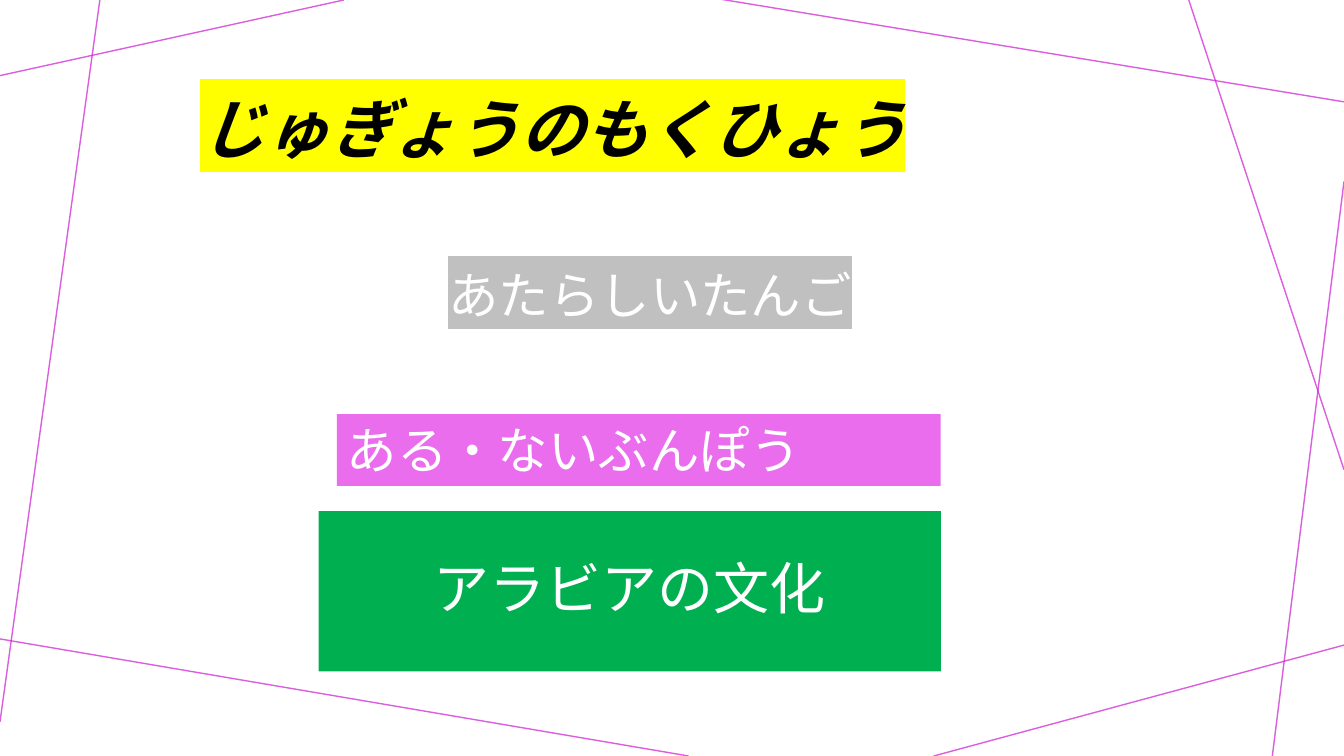
from lxml import etree
from pptx import Presentation
from pptx.dml.color import RGBColor
from pptx.enum.shapes import MSO_CONNECTOR, MSO_SHAPE
from pptx.enum.text import MSO_ANCHOR, PP_ALIGN
from pptx.oxml.ns import qn
from pptx.util import Inches, Pt

STRAIGHT = MSO_CONNECTOR.STRAIGHT
RECTANGLE = MSO_SHAPE.RECTANGLE
TOP, MIDDLE = MSO_ANCHOR.TOP, MSO_ANCHOR.MIDDLE
LEFT, CENTER = PP_ALIGN.LEFT, PP_ALIGN.CENTER

BLACK = RGBColor(0x00, 0x00, 0x00)
WHITE = RGBColor(0xFF, 0xFF, 0xFF)
YELLOW = RGBColor(0xFF, 0xFF, 0x00)
SILVER = RGBColor(0xC0, 0xC0, 0xC0)
GREEN = RGBColor(0x00, 0xB0, 0x50)
PINK = RGBColor(0xE9, 0x6D, 0xEC)
MAGENTA = RGBColor(0xCD, 0x1B, 0xD1)

BORDER_LINES = [
    (25.58, 0, 0, 10),
    (7.43, 0, 0, 95.47),
    (51.24, 100, -0.38, 84.4),
    (100, 85.33, 69.47, 100),
    (100, 24, 94.67, 100),
    (100, 62.13, 88.45, 0),
    (100, 13.47, 53.56, -0.13),
]


class SlideBuilder:
    body_font = "Calibri"
    title_font = "Lato"

    def __init__(self, deck):
        self.page = deck.slides.add_slide(deck.slide_layouts[6])
        self.column = deck.slide_width / 100
        self.row = deck.slide_height / 100

    def place(self, x, y):
        return round(x * self.column), round(y * self.row)

    def border_line(self, x1, y1, x2, y2):
        line = self.page.shapes.add_connector(
            STRAIGHT, *self.place(x1, y1), *self.place(x2, y2))
        line.line.color.rgb = MAGENTA
        line.line.width = Pt(1)
        color = line.line._ln.find(".//" + qn("a:srgbClr"))
        etree.SubElement(color, qn("a:alpha"), val="70000")
        etree.SubElement(line._element.spPr, qn("a:effectLst"))

    def text_box(self, area, text, highlight, **style):
        box = self.page.shapes.add_textbox(
            *self.place(*area[:2]), *self.place(*area[2:]))
        span = self.set_text(box, text, **style)
        mark = etree.SubElement(span._r.get_or_add_rPr(), qn("a:highlight"))
        etree.SubElement(mark, qn("a:srgbClr"), val=str(highlight))

    def panel(self, area, text, fill, **style):
        box = self.page.shapes.add_shape(
            RECTANGLE, *self.place(*area[:2]), *self.place(*area[2:]))
        box.shadow.inherit = False
        box.fill.solid()
        box.fill.fore_color.rgb = fill
        box.line.fill.background()
        self.set_text(box, text, **style)

    def set_text(self, box, text, size=36, color=WHITE, font=body_font,
                 strong=False, align=LEFT, anchor=TOP, spacing=1, after=0):
        frame = box.text_frame
        frame.word_wrap = True
        frame.vertical_anchor = anchor
        para = frame.paragraphs[0]
        para.alignment = align
        para.line_spacing = spacing
        para.space_after = Pt(after)
        para.font.name = font
        para.font.size = Pt(size)
        para.font.bold = para.font.italic = strong
        para.font.color.rgb = color
        span = para.add_run()
        span.text = text
        return span


def main():
    deck = Presentation()
    deck.slide_width, deck.slide_height = Inches(13.33), Inches(7.5)
    slide = SlideBuilder(deck)
    for ends in BORDER_LINES:
        slide.border_line(*ends)
    slide.text_box((14.18, 6.93, 54.61, 21.2), "じゅぎょうのもくひょう", YELLOW,
                   size=46, color=BLACK, font=slide.title_font, strong=True,
                   anchor=MIDDLE, spacing=0.9, after=6)
    slide.panel((23.71, 67.6, 46.29, 21.2), "アラビアの文化", GREEN, size=40,
                align=CENTER, anchor=MIDDLE, spacing=0.9, after=14)
    slide.text_box((32.63, 34.27, 50.41, 9.47), "あたらしいたんご", SILVER)
    slide.panel((25.06, 54.8, 44.94, 9.47), "ある・ないぶんぽう", PINK)
    deck.save("out.pptx")


if __name__ == "__main__":
    main()
